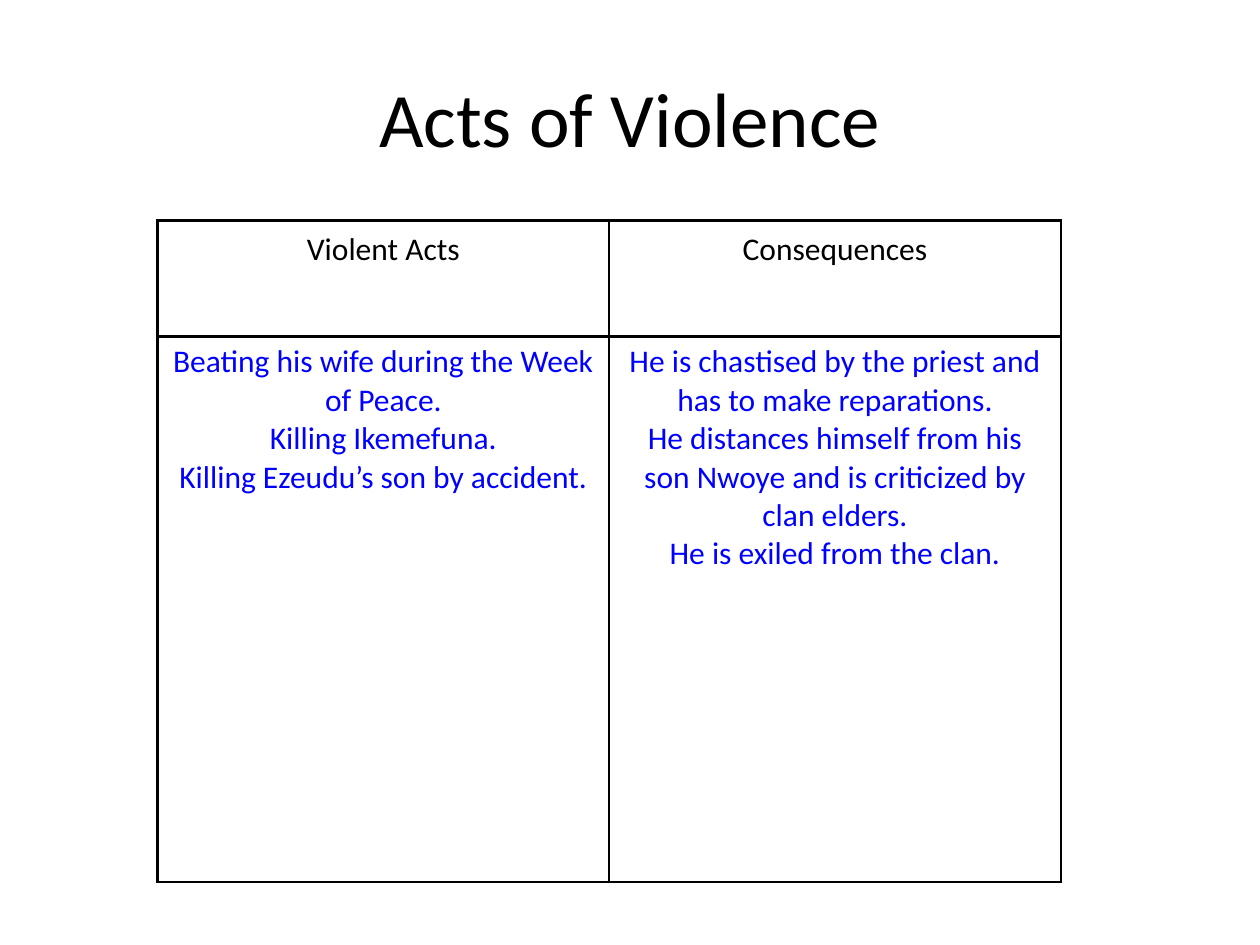
from lxml.etree import SubElement
from pptx import Presentation
from pptx.dml.color import RGBColor
from pptx.enum.text import MSO_ANCHOR as Anchor, PP_ALIGN as Align
from pptx.oxml.ns import qn
from pptx.util import Inches, Pt

COLORS = {"ink": "000000", "answer": "0000FF", "paper": "FFFFFF"}
HEADINGS = ["Violent Acts", "Consequences"]
ANSWERS = [
    "Beating his wife during the Week of Peace.\n"
    "Killing Ikemefuna.\n"
    "Killing Ezeudu’s son by accident.",
    "He is chastised by the priest and has to make reparations.\n"
    "He distances himself from his son Nwoye and is criticized by clan elders.\n"
    "He is exiled from the clan.",
]


def write_text(text_frame, text, size=18, color="ink", font="Calibri"):
    """Fill a text frame with one centred paragraph per line of text."""
    text_frame.word_wrap = True
    text_frame.text = text
    for paragraph in text_frame.paragraphs:
        paragraph.alignment = Align.CENTER
        paragraph.font.size = Pt(size)
        for run in paragraph.runs:
            run.font.name = font
            run.font.size = Pt(size)
            run.font.color.rgb = RGBColor.from_string(COLORS[color])


def add_title(slide, left, top, width, height):
    """Place the slide title, centred in its box."""
    shape = slide.shapes.add_textbox(left, top, width, height)
    write_text(shape.text_frame, "Acts of Violence", size=44)
    shape.text_frame.vertical_anchor = Anchor.MIDDLE


def style_cell(cell, border=1.5):
    """Give a cell solid borders on all sides and a plain fill."""
    properties = cell._tc.get_or_add_tcPr()
    for side in ("lnL", "lnR", "lnT", "lnB"):
        line = SubElement(properties, qn(f"a:{side}"), w=str(Pt(border)))
        fill = SubElement(line, qn("a:solidFill"))
        SubElement(fill, qn("a:srgbClr"), val=COLORS["ink"])
    cell.fill.solid()
    cell.fill.fore_color.rgb = RGBColor.from_string(COLORS["paper"])


def add_violence_table(slide, left, top, width, height, header_height):
    """Place the table of violent acts and their consequences."""
    table = slide.shapes.add_table(2, 2, left, top, width, height).table
    table.first_row = table.horz_banding = False
    table.rows[0].height = header_height
    table.rows[1].height = height - header_height
    for column, (heading, answer) in enumerate(zip(HEADINGS, ANSWERS)):
        table.columns[column].width = width // 2
        header_cell, answer_cell = table.cell(0, column), table.cell(1, column)
        for side in ("left", "top", "right", "bottom"):
            setattr(header_cell, f"margin_{side}", Inches(0.08))
        write_text(header_cell.text_frame, heading)
        write_text(answer_cell.text_frame, answer, color="answer")
        style_cell(header_cell)
        style_cell(answer_cell)


def main():
    """Build the slide and save it."""
    presentation = Presentation()
    presentation.slide_width = Inches(10)
    presentation.slide_height = Inches(7.5)
    slide = presentation.slides.add_slide(presentation.slide_layouts[6])
    add_title(slide, Inches(0.5), Inches(0.3), Inches(9), Inches(1.25))
    add_violence_table(slide, Inches(1.25), Inches(1.75), Inches(7.17),
                       Inches(5.25), header_height=Inches(0.92))
    presentation.save("out.pptx")


if __name__ == "__main__":
    main()
